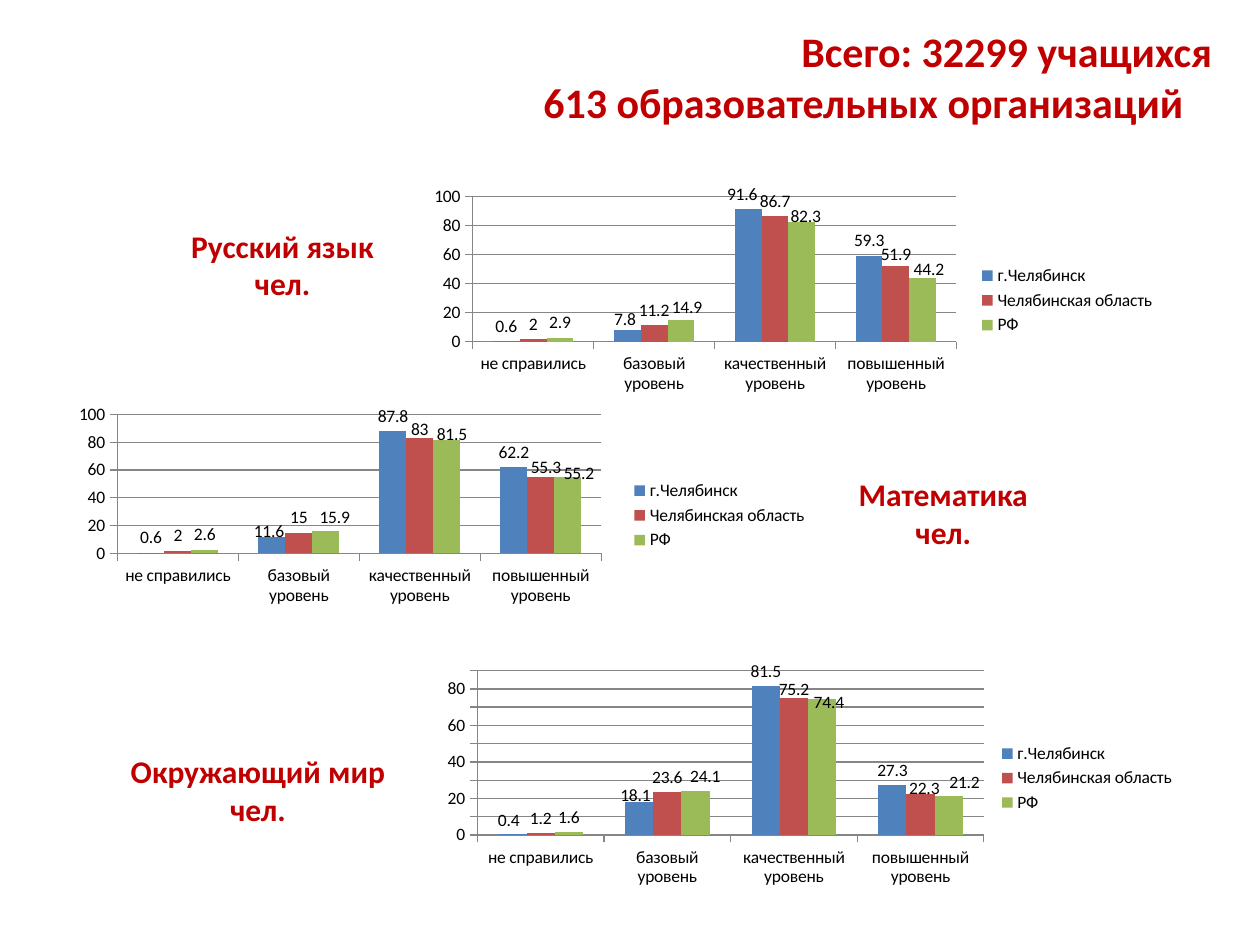
from dataclasses import dataclass

from lxml.etree import SubElement
from pptx import Presentation
from pptx.chart.data import CategoryChartData
from pptx.dml.color import RGBColor
from pptx.enum.chart import XL_CHART_TYPE, XL_LABEL_POSITION, XL_LEGEND_POSITION, XL_TICK_MARK
from pptx.enum.text import MSO_ANCHOR, PP_ALIGN
from pptx.oxml.ns import qn
from pptx.util import Cm, Pt


@dataclass(frozen=True)
class Theme:
    font: str = "Calibri"
    heading: RGBColor = RGBColor(0xC0, 0x00, 0x00)
    text: RGBColor = RGBColor(0x00, 0x00, 0x00)
    axis: RGBColor = RGBColor(0x86, 0x86, 0x86)
    series: tuple = (
        RGBColor(0x4F, 0x81, 0xBD),
        RGBColor(0xC0, 0x50, 0x4D),
        RGBColor(0x9B, 0xBB, 0x59),
    )
    title_size: Pt = Pt(24)
    subject_size: Pt = Pt(18)
    chart_size: Pt = Pt(10)


@dataclass(frozen=True)
class SubjectChart:
    box: tuple
    plot_area: tuple
    maximum: int
    step: int
    values: tuple
    label_shifts: dict


THEME = Theme()
LEVELS = ("не справились", "базовый уровень", "качественный уровень", "повышенный уровень")
REGIONS = ("г.Челябинск", "Челябинская область", "РФ")

# label_shifts: (region, level) -> (x, y) in percent of the chart
RUSSIAN = SubjectChart(
    box=(8.31, 3.73, 15.24, 4.65),
    plot_area=(0.08, 0.05, 0.64, 0.63),
    maximum=100,
    step=20,
    values=((0.6, 7.8, 91.6, 59.3), (2, 11.2, 86.7, 51.9), (2.9, 14.9, 82.3, 44.2)),
    label_shifts={
        (0, 1): (-0.3, 1.7), (0, 2): (-0.8, 0.4), (1, 3): (0, 1.3),
        (2, 1): (0.8, 0.9), (2, 2): (0.5, 3.9), (2, 3): (0.8, 3),
    },
)
MATHEMATICS = SubjectChart(
    box=(1.3, 8.13, 15.24, 4.52),
    plot_area=(0.07, 0.05, 0.64, 0.62),
    maximum=100,
    step=20,
    values=((0.6, 11.6, 87.8, 62.2), (2, 15, 83, 55.3), (2.6, 15.9, 81.5, 55.2)),
    label_shifts={
        (0, 1): (-0.4, 4), (1, 2): (0, 2.7), (1, 3): (0.7, 2.7),
        (2, 1): (1.2, 0.4), (2, 2): (0.7, 4), (2, 3): (1.5, 5.3),
    },
)
NATURE = SubjectChart(
    box=(8.71, 13.34, 15.24, 4.65),
    plot_area=(0.06, 0.03, 0.67, 0.72),
    maximum=90,
    step=10,
    values=((0.4, 18.1, 81.5, 27.3), (1.2, 23.6, 75.2, 22.3), (1.6, 24.1, 74.4, 21.2)),
    label_shifts={
        (0, 0): (-0.5, 0.4), (0, 1): (-0.5, 3.5), (1, 2): (0, 3),
        (1, 3): (0.5, 3.9), (2, 1): (1.3, 0), (2, 2): (0.9, 7.8), (2, 3): (2.1, 0.4),
    },
)


def add_layout(parent, index, settings):
    layout = SubElement(parent, qn("c:layout"))
    manual = SubElement(layout, qn("c:manualLayout"))
    for name, value in settings.items():
        SubElement(manual, qn(f"c:{name}")).set("val", str(value))
    parent.insert(index, layout)


def place_plot_area(chart, plot_area):
    element = chart.element.find(".//" + qn("c:plotArea"))
    for layout in element.findall(qn("c:layout")):
        element.remove(layout)
    modes = {"layoutTarget": "inner", "xMode": "edge", "yMode": "edge"}
    add_layout(element, 0, modes | dict(zip("xywh", plot_area)))


def style_axes(chart, maximum, step):
    value_axis = chart.value_axis
    value_axis.minimum_scale = 0
    value_axis.maximum_scale = maximum
    value_axis.major_unit = step
    value_axis.has_major_gridlines = True
    lines = [value_axis.major_gridlines.format.line]
    for axis in (value_axis, chart.category_axis):
        axis.major_tick_mark = XL_TICK_MARK.OUTSIDE
        lines.append(axis.format.line)
    for line in lines:
        line.color.rgb = THEME.axis
        line.width = Pt(0.75)


def style_series(chart, label_shifts):
    for region, series in enumerate(chart.plots[0].series):
        series.format.fill.solid()
        series.format.fill.fore_color.rgb = THEME.series[region]
        labels = series.data_labels
        labels.show_value = True
        labels.position = XL_LABEL_POSITION.OUTSIDE_END
        for level in range(len(LEVELS)):
            if (region, level) in label_shifts:
                series.points[level].data_label.position = XL_LABEL_POSITION.OUTSIDE_END
        for label in series.data_labels._element.findall(qn("c:dLbl")):
            level = int(label.find(qn("c:idx")).get("val"))
            x, y = label_shifts[region, level]
            add_layout(label, 1, {"x": x / 100, "y": y / 100})


def add_subject_chart(slide, subject):
    data = CategoryChartData()
    data.categories = LEVELS
    for region, values in zip(REGIONS, subject.values):
        data.add_series(region, values)
    box = [Cm(length) for length in subject.box]
    chart = slide.shapes.add_chart(XL_CHART_TYPE.COLUMN_CLUSTERED, *box, data).chart
    chart.has_title = False
    chart.font.name = THEME.font
    chart.font.size = THEME.chart_size
    chart.font.color.rgb = THEME.text
    chart.has_legend = True
    chart.legend.position = XL_LEGEND_POSITION.RIGHT
    chart.legend.include_in_layout = False
    chart.plots[0].gap_width = 150
    chart.plots[0].overlap = 0
    chart.plots[0].vary_by_categories = False
    place_plot_area(chart, subject.plot_area)
    style_axes(chart, subject.maximum, subject.step)
    style_series(chart, subject.label_shifts)


def add_heading(slide, box, lines, size, alignment):
    shape = slide.shapes.add_textbox(*[Cm(length) for length in box])
    frame = shape.text_frame
    frame.word_wrap = True
    frame.vertical_anchor = MSO_ANCHOR.MIDDLE
    frame.text = "\n".join(lines)
    for paragraph in frame.paragraphs:
        paragraph.alignment = alignment
        paragraph.font.name = THEME.font
        paragraph.font.size = size
        paragraph.font.bold = True
        paragraph.font.color.rgb = THEME.heading
    return frame


def main():
    presentation = Presentation()
    presentation.slide_width = Cm(25.4)
    presentation.slide_height = Cm(19.05)
    slide = presentation.slides.add_slide(presentation.slide_layouts[6])

    for subject in (RUSSIAN, MATHEMATICS, NATURE):
        add_subject_chart(slide, subject)

    title = add_heading(
        slide, (1.3, 0.74, 23.39, 1.6),
        ("Всего: 32299 учащихся", "613 образовательных организаций"),
        THEME.title_size, PP_ALIGN.RIGHT,
    )
    title.paragraphs[1]._p.get_or_add_pPr().set("marR", str(Cm(0.58)))

    for name, box in (
        ("Русский язык", (2.9, 3.73, 5.59, 3.2)),
        ("Математика", (16.31, 8.74, 5.41, 3.2)),
        ("Окружающий мир", (1.9, 14.33, 6.6, 3.2)),
    ):
        add_heading(slide, box, (name, "чел."), THEME.subject_size, PP_ALIGN.CENTER)

    presentation.save("out.pptx")


if __name__ == "__main__":
    main()
